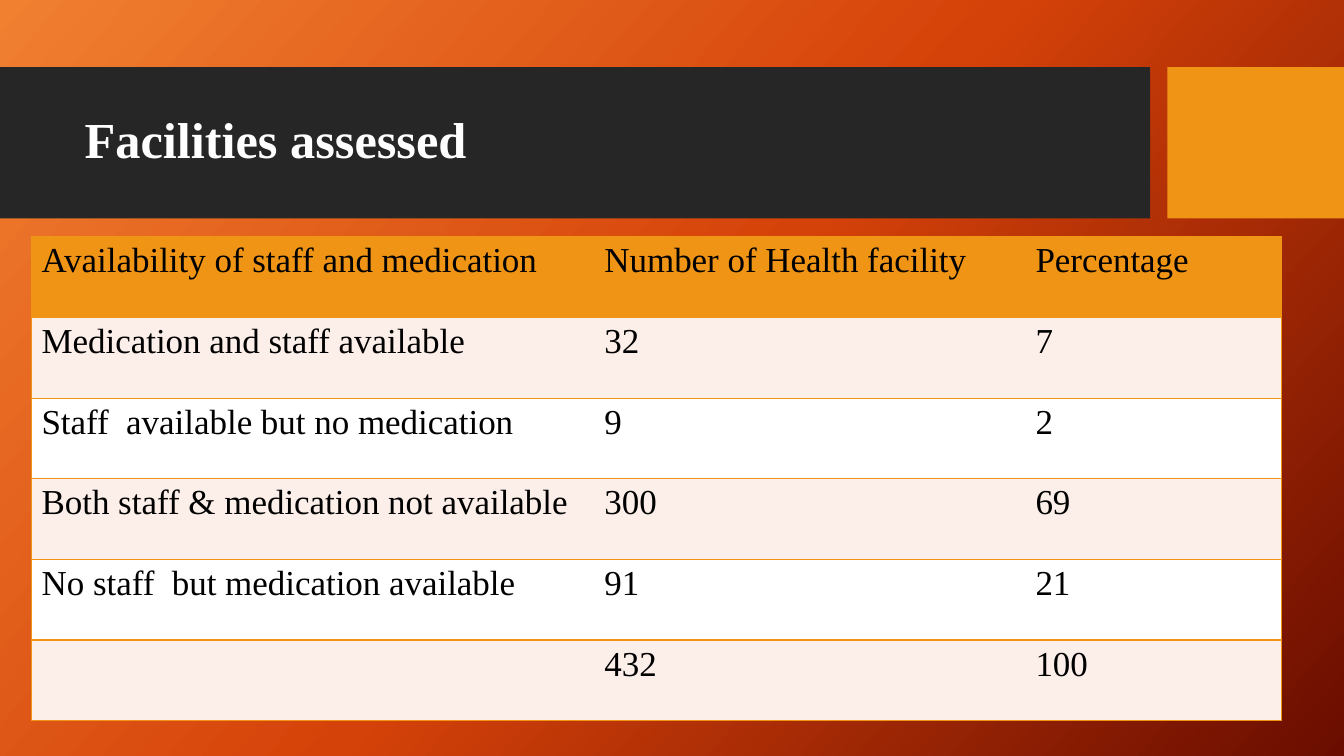
import copy

import pptx
import pptx.dml.color
import pptx.enum.shapes
import pptx.enum.text
import pptx.oxml
import pptx.oxml.ns
import pptx.util

Pt = pptx.util.Pt
qn = pptx.oxml.ns.qn

FONT = "Times New Roman"
ORANGE, CHARCOAL, WHITE, BLACK = "F09415", "262626", "FFFFFF", "000000"
BAND_FILLS = ["FCEEE8", WHITE]
NO_STYLE = "{2D5ABB26-0587-4C30-8999-92F81FD0307C}"

FACILITIES = [
    ("Availability of staff and medication", "Number of Health facility", "Percentage"),
    ("Medication and staff available", "32", "7"),
    ("Staff  available but no medication", "9", "2"),
    ("Both staff & medication not available", "300", "69"),
    ("No staff  but medication available", "91", "21"),
    ("", "432", "100"),
]


def color(value):
    return pptx.dml.color.RGBColor.from_string(value)


class SlideBuilder:
    def __init__(self, slide):
        self.slide = slide

    def background(self, colors, clockwise_angle):
        fill = self.slide.background.fill
        fill.gradient()
        fill.gradient_angle = 360 - clockwise_angle
        stop_list = next(self.slide.element.iter(qn("a:gsLst")))
        while len(stop_list) < len(colors):
            stop_list.insert(1, copy.deepcopy(stop_list[0]))
        for index, (stop, value) in enumerate(zip(fill.gradient_stops, colors)):
            stop.position = index / (len(colors) - 1)
            stop.color.rgb = color(value)

    def rectangle(self, left, top, width, height, fill):
        shape = self.slide.shapes.add_shape(
            pptx.enum.shapes.MSO_SHAPE.RECTANGLE, Pt(left), Pt(top), Pt(width), Pt(height))
        shape.shadow.inherit = False
        shape.fill.solid()
        shape.fill.fore_color.rgb = color(fill)
        shape.line.fill.background()

    def title(self, text, left, top, width, height):
        title = self.slide.shapes.title
        title.left, title.top, title.width, title.height = map(Pt, (left, top, width, height))
        # Bring the title in front of the band
        self.slide.shapes.element.append(title.element)
        title.text_frame.vertical_anchor = pptx.enum.text.MSO_ANCHOR.MIDDLE
        title.text_frame.text = text
        paragraph = title.text_frame.paragraphs[0]
        paragraph.alignment = pptx.enum.text.PP_ALIGN.LEFT
        paragraph.line_spacing = 0.9
        self.format_font(paragraph, 36, WHITE, bold=True)

    def format_font(self, paragraph, size, value, bold=False):
        paragraph.font.name = FONT
        paragraph.font.size = Pt(size)
        paragraph.font.bold = bold
        paragraph.font.color.rgb = color(value)

    def border(self, cell, sides):
        properties = cell._tc.get_or_add_tcPr()
        for side in sides:
            properties.append(pptx.oxml.parse_xml(
                f'<a:ln{side} xmlns:a="http://schemas.openxmlformats.org/drawingml/2006/main" '
                f'w="{Pt(1)}"><a:solidFill><a:srgbClr val="{ORANGE}"/></a:solidFill></a:ln{side}>'))

    def table(self, rows, left, top, column_widths, row_height):
        frame = self.slide.shapes.add_table(
            len(rows), len(column_widths), Pt(left), Pt(top),
            Pt(sum(column_widths)), Pt(row_height * len(rows)))
        table = frame.table
        table.first_row = table.horz_banding = False
        next(frame.element.iter(qn("a:tableStyleId"))).text = NO_STYLE
        for column, width in zip(table.columns, column_widths):
            column.width = Pt(width)
        last = len(column_widths) - 1
        for row_index, values in enumerate(rows):
            table.rows[row_index].height = Pt(row_height)
            fill = BAND_FILLS[(row_index - 1) % 2] if row_index else ORANGE
            for column_index, text in enumerate(values):
                cell = table.cell(row_index, column_index)
                # Outer sides only at the table's edges
                outer = {0: ["L"], last: ["R"]}.get(column_index, [])
                self.border(cell, outer + ["T", "B"])
                cell.fill.solid()
                cell.fill.fore_color.rgb = color(fill)
                cell.text = text
                self.format_font(cell.text_frame.paragraphs[0], 25, BLACK)


def main():
    presentation = pptx.Presentation()
    presentation.slide_width, presentation.slide_height = Pt(960), Pt(540)
    builder = SlideBuilder(presentation.slides.add_slide(presentation.slide_layouts[5]))

    # Background and title band
    builder.background(["F18031", "D54209", "6A0D00"], 42)
    builder.rectangle(0, 48, 821.5, 108, CHARCOAL)
    builder.rectangle(833.8, 48, 126.2, 108, ORANGE)
    builder.title("Facilities assessed", 53.3, 59, 756.7, 85)

    # Facility table
    builder.table(FACILITIES, 22.5, 169.2, [402, 308, 183], 57.6)

    presentation.save("out.pptx")


if __name__ == "__main__":
    main()
